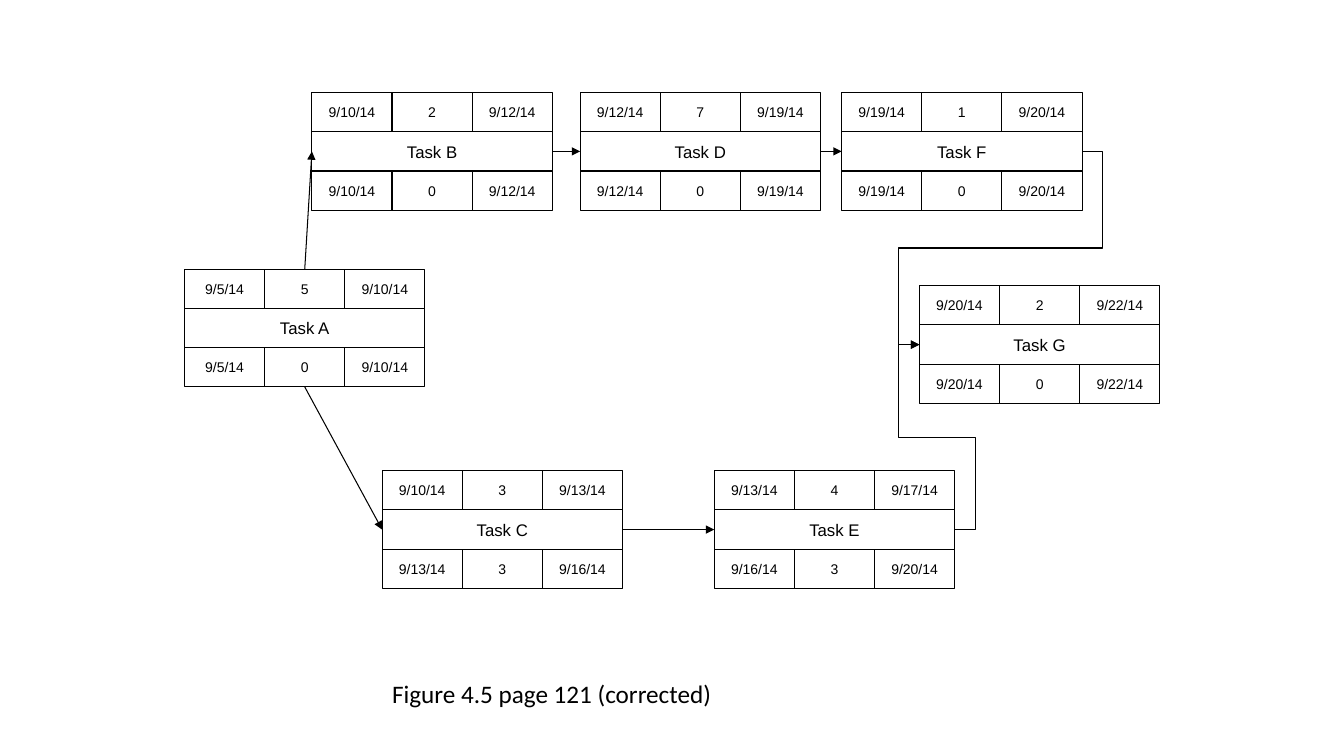
from dataclasses import dataclass

from lxml.etree import SubElement
from pptx import Presentation
from pptx.dml.color import RGBColor
from pptx.enum.shapes import MSO_CONNECTOR, MSO_SHAPE
from pptx.enum.text import MSO_ANCHOR, PP_ALIGN
from pptx.oxml.ns import qn
from pptx.shapes.autoshape import Shape
from pptx.shapes.connector import Connector
from pptx.slide import Slide
from pptx.text.text import TextFrame
from pptx.util import Cm, Pt


@dataclass(frozen=True)
class Theme:
    ink: RGBColor = RGBColor(0, 0, 0)
    node_font: str = "Arial"
    caption_font: str = "Calibri"
    value_size: float = 10
    task_size: float = 12
    caption_size: float = 18
    line_width: float = 0.75


@dataclass(frozen=True)
class Task:
    name: str
    left: float
    top: float
    early: tuple[str, str, str]  # early start, duration, early finish
    late: tuple[str, str, str]  # late start, slack, late finish


@dataclass(frozen=True)
class Node:
    title: Shape
    duration: Shape
    slack: Shape


THEME = Theme()
CELL_W, CELL_H = 2.02, 0.99
STUB = 0.53  # how far a bent arrow runs clear of a box
TOP, LEFT, BOTTOM, RIGHT = range(4)

TASKS = [
    Task("A", 4.65, 6.78, ("9/5/14", "5", "9/10/14"), ("9/5/14", "0", "9/10/14")),
    Task("B", 7.86, 2.33, ("9/10/14", "2", "9/12/14"), ("9/10/14", "0", "9/12/14")),
    Task("C", 9.63, 11.86, ("9/10/14", "3", "9/13/14"), ("9/13/14", "3", "9/16/14")),
    Task("D", 14.62, 2.33, ("9/12/14", "7", "9/19/14"), ("9/12/14", "0", "9/19/14")),
    Task("F", 21.21, 2.33, ("9/19/14", "1", "9/20/14"), ("9/19/14", "0", "9/20/14")),
    Task("E", 18.0, 11.86, ("9/13/14", "4", "9/17/14"), ("9/16/14", "3", "9/20/14")),
    Task("G", 23.17, 7.2, ("9/20/14", "2", "9/22/14"), ("9/20/14", "0", "9/22/14")),
]


def add_text(tf: TextFrame, text: str, size: float, font: str, align: PP_ALIGN) -> None:
    tf.word_wrap = False
    p = tf.paragraphs[0]
    p.alignment = align
    r = p.add_run()
    r.text = text
    r.font.size = Pt(size)
    r.font.name = font
    r.font.color.rgb = THEME.ink


def add_cell(s: Slide, left: float, top: float, width: float, text: str, size: float) -> Shape:
    sp = s.shapes.add_shape(MSO_SHAPE.RECTANGLE, Cm(left), Cm(top), Cm(width), Cm(CELL_H))
    sp.shadow.inherit = False
    sp.fill.background()
    sp.line.color.rgb = THEME.ink
    sp.line.width = Pt(THEME.line_width)
    sp.text_frame.vertical_anchor = MSO_ANCHOR.MIDDLE
    add_text(sp.text_frame, text, size, THEME.node_font, PP_ALIGN.CENTER)
    return sp


def add_node(s: Slide, task: Task) -> Node:
    def add_row(row: int, values: tuple[str, str, str]) -> list[Shape]:
        return [add_cell(s, task.left + col * CELL_W, task.top + row * CELL_H,
                         CELL_W, value, THEME.value_size)
                for col, value in enumerate(values)]

    early, late = add_row(0, task.early), add_row(2, task.late)
    title = add_cell(s, task.left, task.top + CELL_H, 3 * CELL_W,
                     f"Task {task.name}", THEME.task_size)
    return Node(title, early[1], late[1])


def add_arrow(s: Slide, start: Shape, side: int, end: Shape,
              kind: MSO_CONNECTOR = MSO_CONNECTOR.STRAIGHT) -> Connector:
    c = s.shapes.add_connector(kind, 0, 0, 0, 0)
    c.begin_connect(start, side)
    c.end_connect(end, LEFT)
    c.line.color.rgb = THEME.ink
    c.line.width = Pt(THEME.line_width)
    sp_pr = c.element.spPr
    SubElement(sp_pr.find(qn("a:ln")), qn("a:tailEnd"), type="triangle")
    SubElement(sp_pr, qn("a:effectLst"))
    return c


def add_bent_arrow(s: Slide, start: Shape, end: Shape) -> None:
    c = add_arrow(s, start, RIGHT, end, MSO_CONNECTOR.ELBOW)
    geom = c.element.spPr.find(qn("a:prstGeom"))
    geom.set("prst", "bentConnector5")
    guides = geom.find(qn("a:avLst"))
    if guides is None:
        guides = SubElement(geom, qn("a:avLst"))
    reach = Cm(STUB) / c.width
    for i, share in enumerate((-reach, 0.5, 1 + reach), start=1):
        SubElement(guides, qn("a:gd"), name=f"adj{i}", fmla=f"val {round(share * 100000)}")


def main() -> None:
    prs = Presentation()
    prs.slide_width, prs.slide_height = Cm(33.87), Cm(19.05)
    s = prs.slides.add_slide(prs.slide_layouts[6])

    # Task boxes
    nodes = {task.name: add_node(s, task) for task in TASKS}

    # Arrows from the first task
    add_arrow(s, nodes["A"].duration, TOP, nodes["B"].title)
    add_arrow(s, nodes["A"].slack, BOTTOM, nodes["C"].title)

    # Arrows along the rows, then into the last task
    for start, end in ("BD", "DF", "CE"):
        add_arrow(s, nodes[start].title, RIGHT, nodes[end].title)
    for start in "FE":
        add_bent_arrow(s, nodes[start].title, nodes["G"].title)

    # Caption
    box = s.shapes.add_textbox(Cm(9.63), Cm(16.97), Cm(8.66), Cm(1.03))
    add_text(box.text_frame, "Figure 4.5 page 121 (corrected)",
             THEME.caption_size, THEME.caption_font, PP_ALIGN.LEFT)

    prs.save("out.pptx")


if __name__ == "__main__":
    main()
